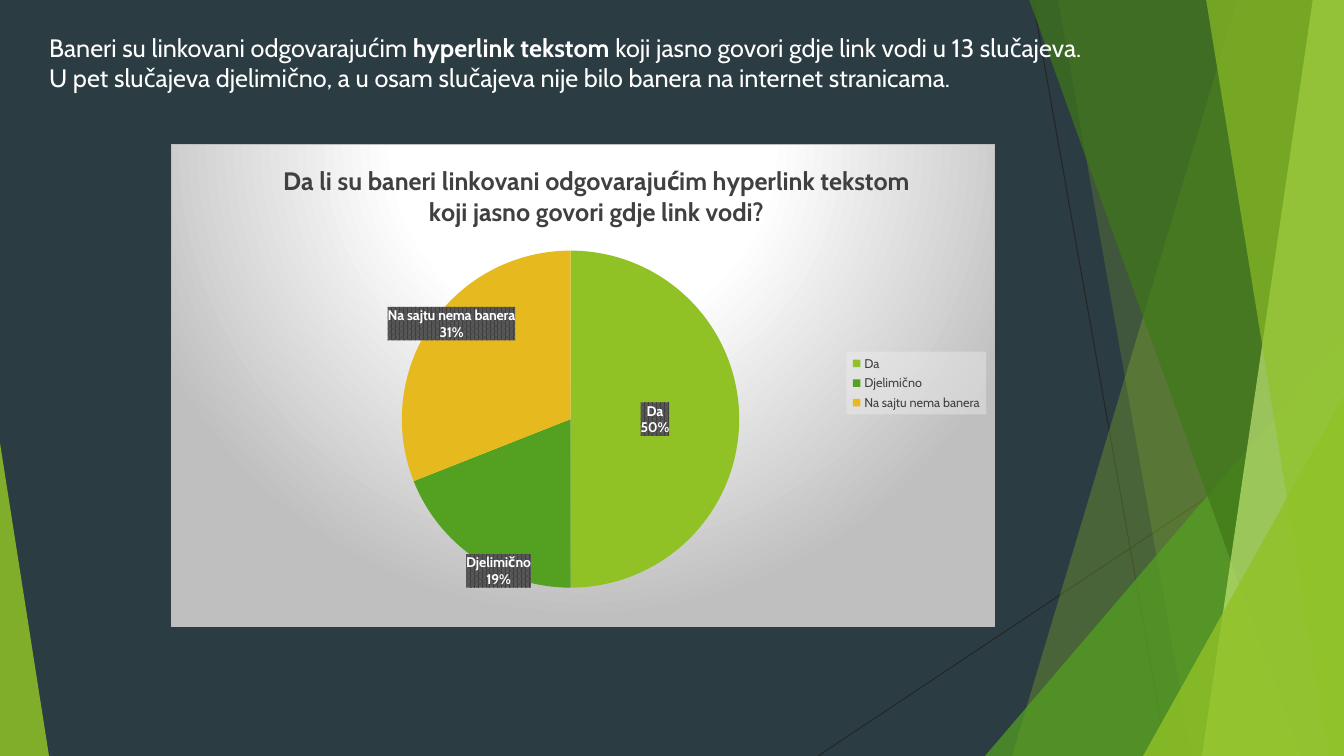
from copy import deepcopy
from lxml import etree
from pptx import Presentation, util as u
from pptx.chart.data import CategoryChartData
from pptx.dml.color import RGBColor
from pptx.enum import chart as ch, shapes as sh, text as tx
from pptx.oxml import parse_xml
from pptx.oxml.ns import qn

PX = 914400 / 100.8
FONT = "Cabin"
DARK = RGBColor(0x2C, 0x3C, 0x43)
LINE = RGBColor(0x26, 0x26, 0x26)
LIME = RGBColor(0x90, 0xC2, 0x26)
GREEN = RGBColor(0x54, 0xA0, 0x21)
MOSS = RGBColor(0x3F, 0x78, 0x19)
PALE = RGBColor(0xC0, 0xE4, 0x74)
GOLD = RGBColor(0xE6, 0xB9, 0x1E)
WHITE = RGBColor(0xFF, 0xFF, 0xFF)
LIGHT = RGBColor(0xF2, 0xF2, 0xF2)
SILVER = RGBColor(0xBF, 0xBF, 0xBF)
GREY = RGBColor(0x59, 0x59, 0x59)
INK = RGBColor(0x40, 0x40, 0x40)
SPACE = ('xmlns:a="http://schemas.openxmlformats.org/drawingml/2006/main" '
         'xmlns:c="http://schemas.openxmlformats.org/drawingml/2006/chart"')
HEAD = "Da li su baneri linkovani odgovarajućim hyperlink tekstom koji jasno govori gdje link vodi?"
PARTS = [("Da", 50, LIME), ("Djelimično", 19, GREEN), ("Na sajtu nema banera", 31, GOLD)]


def px(n):
    return u.Emu(round(n * PX))


def style(font, size, color, bold=False):
    font.name, font.size, font.bold = FONT, u.Pt(size), bold
    font.color.rgb = color


def write(para, words, **look):
    run = para.add_run()
    run.text = words
    style(run.font, **look)


def tint(shape, color, alpha):
    shape.shadow.inherit = False
    shape.fill.solid()
    shape.fill.fore_color.rgb = color
    node = shape.element.spPr.find(qn("a:solidFill"))[0]
    etree.SubElement(node, qn("a:alpha"), val=str(alpha * 1000))
    shape.line.fill.background()


def ray(slide, *ends):
    line = slide.shapes.add_connector(sh.MSO_CONNECTOR.STRAIGHT, *map(px, ends))
    line.line.color.rgb = LINE
    line.line.width = u.Pt(0.75)
    etree.SubElement(line.element.spPr, qn("a:effectLst"))


def shard(slide, top, base, color, alpha):
    form = slide.shapes.build_freeform(top, -1, scale=PX)
    form.add_line_segments([(1344, -1), (1344, 756), (base, 756)])
    tint(form.convert_to_shape(), color, alpha)


def wedge(slide, left, top, width, peak, color, alpha):
    kind = sh.MSO_SHAPE.ISOSCELES_TRIANGLE
    shape = slide.shapes.add_shape(kind, px(left), px(top), px(width), px(756 - top))
    shape.adjustments[0] = peak
    tint(shape, color, alpha)


def decor(slide):
    ray(slide, 1033, 0, 1167, 756)
    ray(slide, 1344, 406, 818, 756)
    shard(slide, 1238, 1012, LIME, 30)
    shard(slide, 1058, 1192, LIME, 20)
    wedge(slide, 985, 336, 359, 1, GREEN, 72)
    shard(slide, 1029, 1301, MOSS, 70)
    shard(slide, 1313, 1202, PALE, 70)
    shard(slide, 1206, 1329, LIME, 65)
    wedge(slide, 1143, 396, 201, 1, LIME, 80)
    wedge(slide, 0, 443, 49, 0, LIME, 85)


def intro(slide):
    box = slide.shapes.title
    box.left, box.top, box.width, box.height = map(px, (39, 27, 1194, 254))
    frame = box.text_frame
    frame.word_wrap = True
    frame.auto_size = tx.MSO_AUTO_SIZE.NONE
    frame.vertical_anchor = tx.MSO_ANCHOR.TOP
    first, last = frame.paragraphs[0], frame.add_paragraph()
    look = dict(size=18, color=WHITE)
    write(first, "Baneri su linkovani odgovarajućim ", **look)
    write(first, "hyperlink tekstom ", bold=True, **look)
    write(first, "koji jasno govori gdje link vodi u 13 slučajeva.", **look)
    write(last, "U pet slučajeva djelimično, a u osam slučajeva nije bilo banera "
                "na internet stranicama.", **look)
    for para in frame.paragraphs:
        para.alignment = tx.PP_ALIGN.LEFT
    box.element.getparent().append(box.element)


def paint(body):
    return parse_xml(f"<c:spPr {SPACE}>{body}</c:spPr>")


def place(node, spot, target="", mode="", **size):
    old = node.find(qn("c:layout"))
    if old is not None:
        node.remove(old)
    tags = f'<c:layoutTarget val="{target}"/>' if target else ""
    if mode:
        tags += f'<c:xMode val="{mode}"/><c:yMode val="{mode}"/>'
    tags += "".join(f'<c:{key} val="{val}"/>' for key, val in size.items())
    node.insert(spot, parse_xml(
        f"<c:layout {SPACE}><c:manualLayout>{tags}</c:manualLayout></c:layout>"))


def label(series):
    tags = series.data_labels
    style(tags.font, 10, WHITE, True)
    tags.show_category_name = tags.show_percentage = True
    tags.show_value = False
    tags.position = ch.XL_LABEL_POSITION.CENTER
    root = tags.font._element.getparent().getparent().getparent().getparent()
    root.find(qn("c:txPr")).addprevious(paint(
        f'<a:pattFill prst="pct75"><a:fgClr><a:srgbClr val="{INK}"/></a:fgClr>'
        f'<a:bgClr><a:srgbClr val="{GREY}"/></a:bgClr></a:pattFill>'))
    root.insert(0, parse_xml(
        f'<c:numFmt {SPACE} formatCode="0%" sourceLinked="0"/>'))
    base = [kid for kid in root if kid.tag != qn("c:showLeaderLines")]
    for spot, (x, y) in enumerate([(-0.03, 0.17), (-0.06, -0.1)]):
        one = parse_xml(f'<c:dLbl {SPACE}><c:idx val="{spot + 1}"/></c:dLbl>')
        one.extend(deepcopy(base))
        place(one, 1, x=x, y=y)
        root.insert(spot, one)


def pie(slide):
    data = CategoryChartData()
    data.categories = [name for name, _, _ in PARTS]
    data.add_series(HEAD, [val for _, val, _ in PARTS])
    area = map(px, (171, 144, 824, 483))
    chart = slide.shapes.add_chart(ch.XL_CHART_TYPE.PIE, *area, data).chart
    style(chart.font, 10, WHITE)
    chart.has_title = True
    write(chart.chart_title.text_frame.paragraphs[0], HEAD, size=18, color=INK, bold=True)
    chart.has_legend = True
    legend = chart.legend
    legend.position = ch.XL_LEGEND_POSITION.RIGHT
    legend.include_in_layout = False
    style(legend.font, 9, INK)

    plot = chart.plots[0]
    plot.vary_by_categories = True
    series = plot.series[0]
    for spot, (_, _, color) in enumerate(PARTS):
        fill = series.points[spot].format.fill
        fill.solid()
        fill.fore_color.rgb = color
    label(series)

    root = chart.element
    body = root.find(qn("c:chart"))
    place(body.find(qn("c:title")), 1, mode="edge", x=0.13, y=0.03)
    place(body.find(qn("c:plotArea")), 0, "inner", "edge", x=0.28, y=0.22, w=0.41, h=0.7)
    key = body.find(qn("c:legend"))
    place(key, 1, mode="edge", x=0.82, y=0.43, w=0.17, h=0.13)
    key.find(qn("c:txPr")).addprevious(paint(
        f'<a:solidFill><a:srgbClr val="{LIGHT}"><a:alpha val="39000"/></a:srgbClr></a:solidFill>'))
    stops = "".join(f'<a:gs pos="{pos}000"><a:srgbClr val="{color}"/></a:gs>'
                    for pos, color in [(0, WHITE), (39, WHITE), (100, SILVER)])
    body.addnext(paint(
        f'<a:gradFill><a:gsLst>{stops}</a:gsLst><a:path path="circle">'
        '<a:fillToRect l="50000" t="-80000" r="50000" b="180000"/></a:path></a:gradFill>'
        f'<a:ln w="9525"><a:solidFill><a:srgbClr val="{SILVER}"/></a:solidFill></a:ln>'))


def main():
    deck = Presentation()
    deck.slide_width, deck.slide_height = px(1344), px(756)
    slide = deck.slides.add_slide(deck.slide_layouts[5])
    slide.background.fill.solid()
    slide.background.fill.fore_color.rgb = DARK
    decor(slide)
    intro(slide)
    pie(slide)
    deck.save("out.pptx")


if __name__ == "__main__":
    main()
